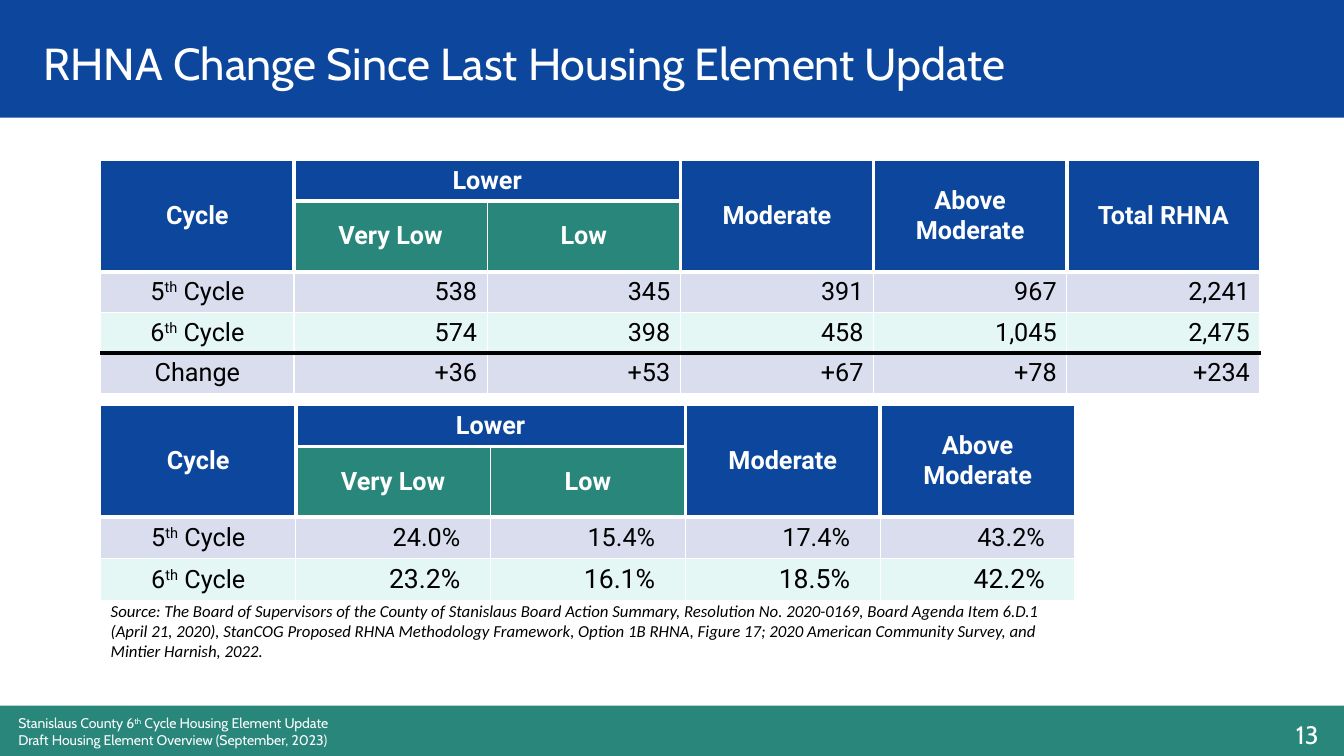
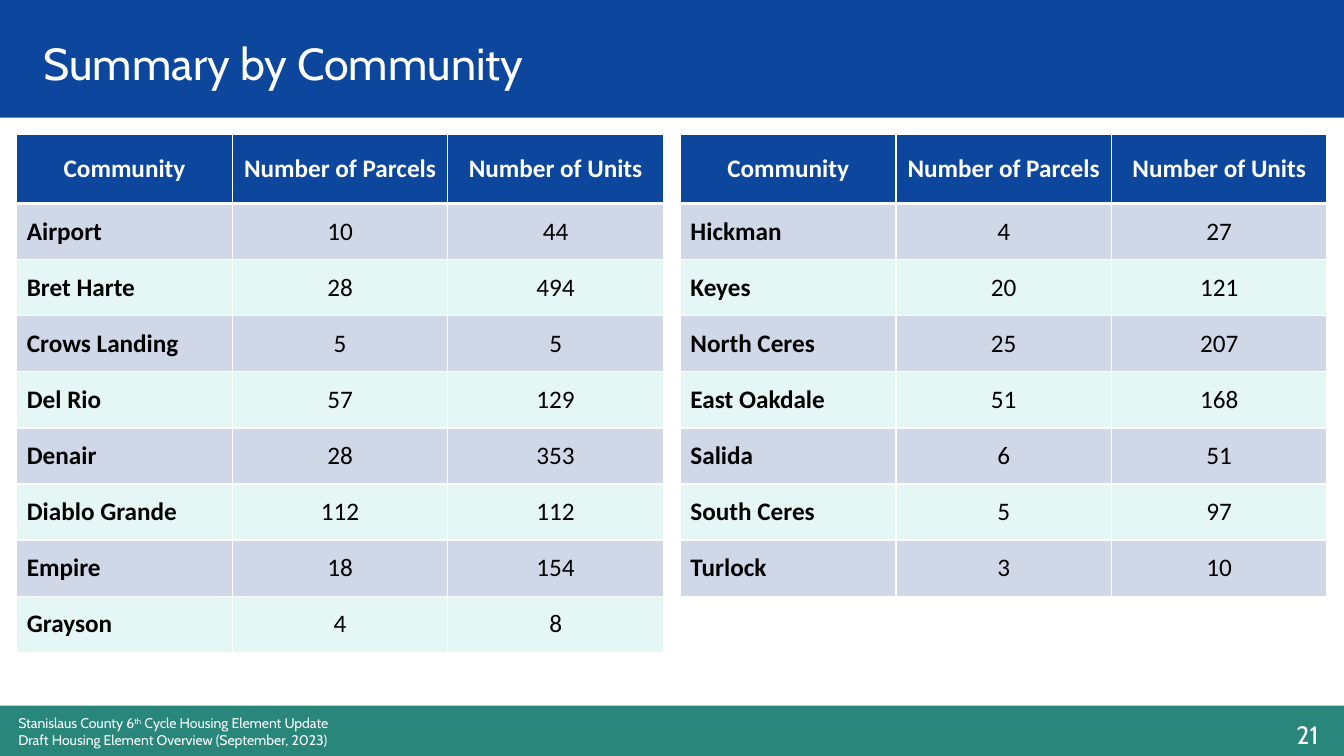
from dataclasses import dataclass

from lxml.etree import SubElement
from pptx import Presentation
from pptx.dml.color import RGBColor
from pptx.enum.shapes import MSO_SHAPE as Preset
from pptx.enum.text import MSO_ANCHOR as Anchor, PP_ALIGN as Align
from pptx.oxml.ns import qn
from pptx.util import Inches, Pt

COLORS = {
    "blue": "0C479D",
    "green": "29867B",
    "white": "FFFFFF",
    "black": "000000",
    "lavender": "D9DDEE",
    "steel": "D0D8E8",
    "mint": "E5F7F5",
}
COLUMNS, ROWS = 80, 45
WIDTH, HEIGHT = Inches(13.333), Inches(7.5)
FOOTER = (
    "Stanislaus County 6^th^ Cycle Housing Element Update\n"
    "Draft Housing Element Overview (September, 2023)"
)


@dataclass
class TableStyle:
    font: str
    band: str
    label_align: Align
    label_bold: bool
    value_align: Align
    divider: int = 1
    value_inset: float = 0.1


COUNTS = TableStyle("Roboto", "lavender", Align.CENTER, False, Align.RIGHT, divider=3)
SHARES = TableStyle("Roboto", "lavender", Align.CENTER, False, Align.RIGHT, 3, 0.3)
COMMUNITIES = TableStyle("Calibri", "steel", Align.LEFT, True, Align.CENTER)


def color(name):
    return RGBColor.from_string(COLORS[name])


def across(columns):
    return round(columns * WIDTH / COLUMNS)


def down(rows):
    return round(rows * HEIGHT / ROWS)


def write(frame, text, size, font, fill, align=Align.LEFT, bold=False, italic=False):
    paragraph = frame.paragraphs[0]
    paragraph.alignment = align
    for index, piece in enumerate(text.split("^")):
        for line_number, line in enumerate(piece.split("\n")):
            if line_number:
                paragraph.add_line_break()
            run = paragraph.add_run()
            run.text = line
            run.font.size = Pt(size)
            run.font.name = font
            run.font.bold = bold
            run.font.italic = italic
            run.font.color.rgb = color(fill)
            if index % 2:
                run.font._element.set("baseline", "30000")


def add_borders(cell, borders):
    properties = cell._tc.get_or_add_tcPr()
    for side in "LRTB":
        width, fill = borders.get(side, (1, "white"))
        line = SubElement(properties, qn(f"a:ln{side}"), w=str(Pt(width)))
        solid = SubElement(line, qn("a:solidFill"))
        SubElement(solid, qn("a:srgbClr"), val=COLORS[fill])


class Deck:
    def __init__(self):
        self.presentation = Presentation()
        self.presentation.slide_width = WIDTH
        self.presentation.slide_height = HEIGHT
        self.slide = None

    def new_slide(self, title, number):
        layout = self.presentation.slide_layouts[6]
        self.slide = self.presentation.slides.add_slide(layout)
        self.band(0, 7, "blue")
        self.band(42, 3, "green")
        self.text(0.5, 42.25, 46.5, 2.7, FOOTER, 10)
        self.text(60.42, 42.5, 18.66, 3, str(number), 18, align=Align.RIGHT)
        self.text(2, 1, 64.7, 5.5, title, 32, anchor=Anchor.MIDDLE)

    def band(self, top, height, fill):
        shape = self.slide.shapes.add_shape(
            Preset.RECTANGLE, 0, down(top), WIDTH, down(height)
        )
        shape.shadow.inherit = False
        shape.fill.solid()
        shape.fill.fore_color.rgb = color(fill)
        shape.line.fill.background()

    def text(self, left, top, width, height, text, size, font="Cabin",
             fill="white", anchor=Anchor.TOP, **options):
        shape = self.slide.shapes.add_textbox(
            across(left), down(top), across(width), down(height)
        )
        frame = shape.text_frame
        frame.word_wrap = True
        frame.vertical_anchor = anchor
        write(frame, text, size, font, fill, **options)

    def table(self, left, top, column_width, row_heights, rows, style,
              header_rows=1, merges=(), total_row=None, value_sizes=None):
        width = column_width * len(rows[0])
        table = self.slide.shapes.add_table(
            len(rows), len(rows[0]), across(left), down(top),
            across(width), down(sum(row_heights)),
        ).table
        table.first_row = table.horz_banding = False
        for column in table.columns:
            column.width = across(column_width)
        for row, height in zip(table.rows, row_heights):
            row.height = down(height)
        for first, last in merges:
            table.cell(*first).merge(table.cell(*last))
        for row, values in enumerate(rows):
            for column, value in enumerate(values):
                cell = table.cell(row, column)
                cell.vertical_anchor = Anchor.MIDDLE
                if row < header_rows:
                    self.header_cell(cell, row, column, value, len(values), style)
                else:
                    size = (value_sizes or {}).get(row, 18) if column else 18
                    banded = (row - header_rows) % 2 == 0
                    self.body_cell(cell, row, column, value, size, banded,
                                   total_row, style)

    def header_cell(self, cell, row, column, value, column_count, style):
        subheading = row == 1 and value is not None
        divider = 1 if subheading else style.divider
        borders = {"B": (3, "white")}
        if column > 0:
            borders["L"] = (divider, "white")
        if column < column_count - 1:
            borders["R"] = (divider, "white")
        add_borders(cell, borders)
        cell.fill.solid()
        cell.fill.fore_color.rgb = color("green" if subheading else "blue")
        if value:
            write(cell.text_frame, value, 18, style.font, "white", Align.CENTER, True)

    def body_cell(self, cell, row, column, value, size, banded, total_row, style):
        borders = {}
        if total_row is not None and row in (total_row - 1, total_row):
            borders["T" if row == total_row else "B"] = (3, "black")
        add_borders(cell, borders)
        cell.fill.solid()
        cell.fill.fore_color.rgb = color(style.band if banded else "mint")
        if column:
            cell.margin_right = Inches(style.value_inset)
        align = style.value_align if column else style.label_align
        bold = style.label_bold and column == 0
        write(cell.text_frame, value, size, style.font, "black", align, bold)


def income_table(deck, top, column_width, row_height, headings, body, style, **options):
    column_count = 3 + len(headings)
    header = [
        ["Cycle", "Lower", None, *headings],
        [None, "Very Low", "Low", *[None] * len(headings)],
    ]
    merges = [((0, 1), (0, 2))]
    merges += [((0, column), (1, column)) for column in (0, *range(3, column_count))]
    rows = header + body
    deck.table(6, top, column_width, [row_height] * len(rows), rows, style,
               header_rows=2, merges=merges, **options)


def community_table(deck, left, body):
    header = ["Community", "Number of Parcels", "Number of Units"]
    heights = [4.12] + [3.34] * len(body)
    deck.table(left, 8, 12.83, heights, [header, *body], COMMUNITIES)


def main():
    deck = Deck()

    deck.new_slide("RHNA Change Since Last Housing Element Update", 13)
    income_table(
        deck, 9.55, 11.5, 2.42, ["Moderate", "Above Moderate", "Total RHNA"],
        [
            ["5^th^ Cycle", "538", "345", "391", "967", "2,241"],
            ["6^th^ Cycle", "574", "398", "458", "1,045", "2,475"],
            ["Change", "+36", "+53", "+67", "+78", "+234"],
        ],
        COUNTS, total_row=4,
    )
    income_table(
        deck, 24.12, 11.6, 2.46, ["Moderate", "Above Moderate"],
        [
            ["5^th^ Cycle", "24.0%", "15.4%", "17.4%", "43.2%"],
            ["6^th^ Cycle", "23.2%", "16.1%", "18.5%", "42.2%"],
        ],
        SHARES, value_sizes={3: 19},
    )
    deck.text(
        6, 35.45, 56.5, 4.25,
        "Source: The Board of Supervisors of the County of Stanislaus Board Action "
        "Summary, Resolution No. 2020-0169, Board Agenda Item 6.D.1 (April 21, 2020), "
        "StanCOG Proposed RHNA Methodology Framework, Option 1B RHNA, Figure 17; "
        "2020 American Community Survey, and Mintier Harnish, 2022.",
        12, font="Calibri", fill="black", italic=True,
    )

    deck.new_slide("Summary by Community", 21)
    community_table(deck, 1, [
        ["Airport", "10", "44"],
        ["Bret Harte", "28", "494"],
        ["Crows Landing", "5", "5"],
        ["Del Rio", "57", "129"],
        ["Denair", "28", "353"],
        ["Diablo Grande", "112", "112"],
        ["Empire", "18", "154"],
        ["Grayson", "4", "8"],
    ])
    community_table(deck, 40.5, [
        ["Hickman", "4", "27"],
        ["Keyes", "20", "121"],
        ["North Ceres", "25", "207"],
        ["East Oakdale", "51", "168"],
        ["Salida", "6", "51"],
        ["South Ceres", "5", "97"],
        ["Turlock", "3", "10"],
    ])

    deck.presentation.save("out.pptx")


if __name__ == "__main__":
    main()
